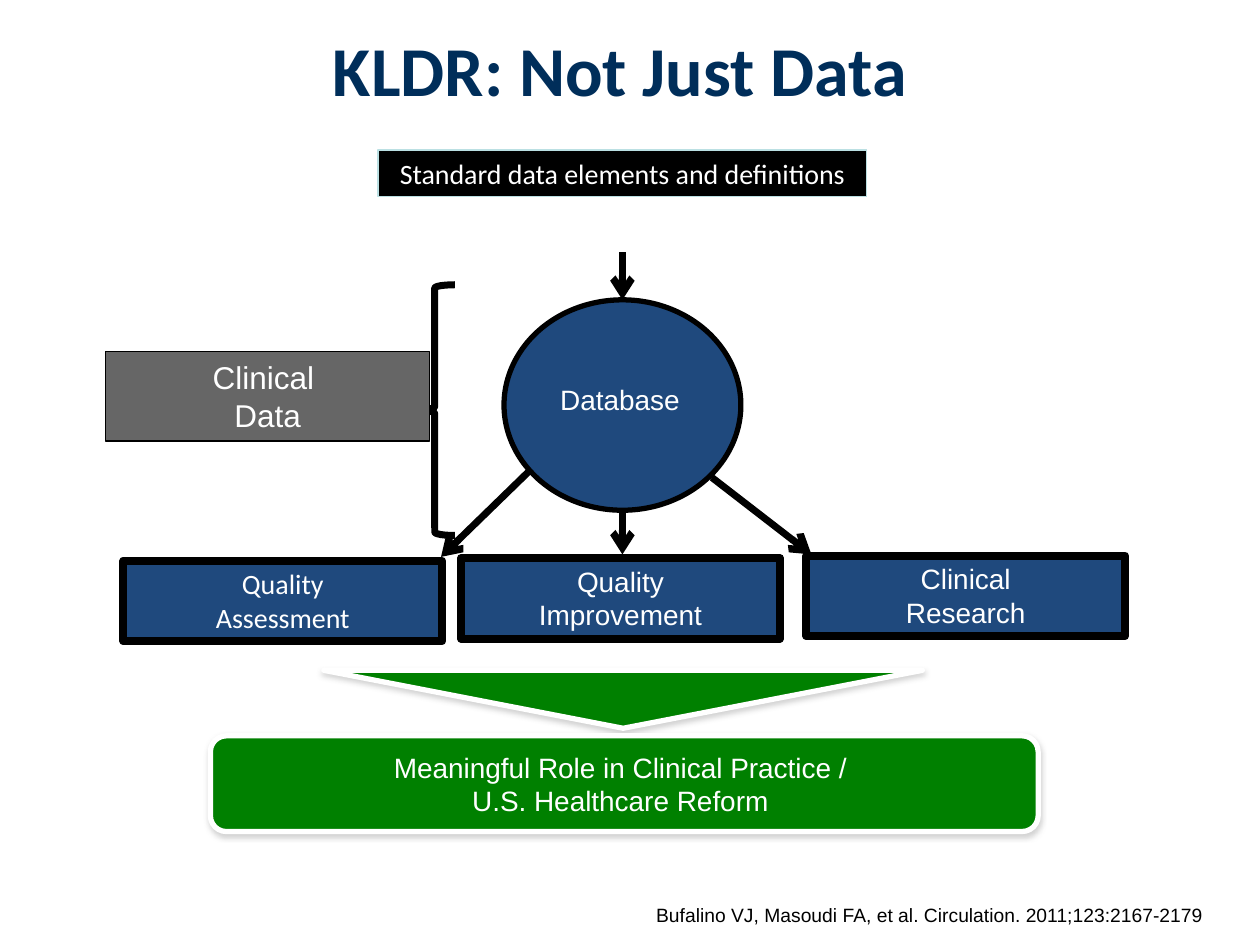
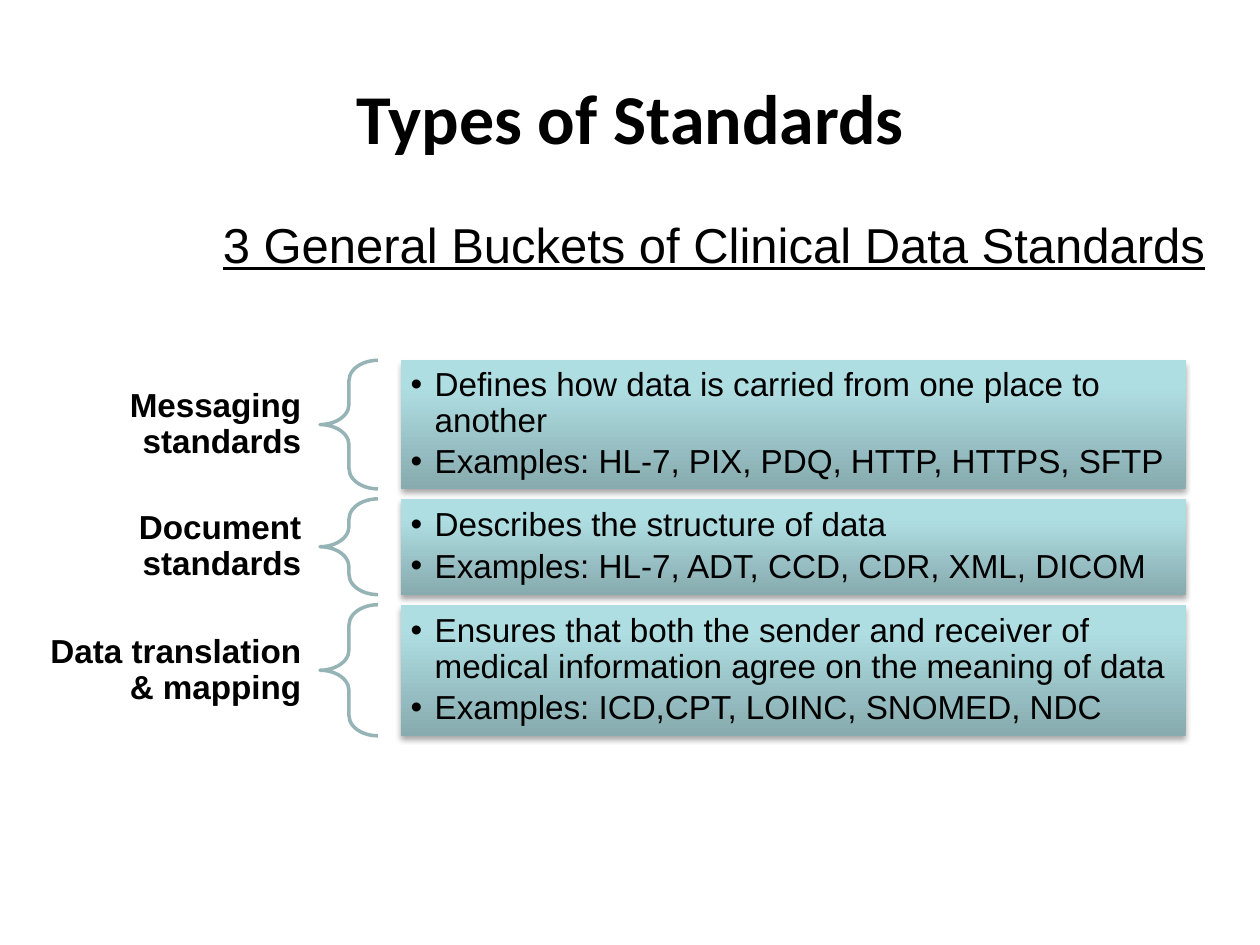
from copy import deepcopy
from dataclasses import dataclass

from lxml import etree
from pptx import Presentation
from pptx.dml.color import RGBColor
from pptx.enum.shapes import MSO_CONNECTOR, MSO_SHAPE
from pptx.enum.text import MSO_ANCHOR, PP_ALIGN
from pptx.oxml.ns import qn
from pptx.util import Inches, Pt

RECT, OVAL, BRACE = MSO_SHAPE.RECTANGLE, MSO_SHAPE.OVAL, MSO_SHAPE.LEFT_BRACE
ROUND, WEDGE = MSO_SHAPE.ROUNDED_RECTANGLE, MSO_SHAPE.ISOSCELES_TRIANGLE
TOP, MID = MSO_ANCHOR.TOP, MSO_ANCHOR.MIDDLE
LEFT, MIDST, RIGHT = PP_ALIGN.LEFT, PP_ALIGN.CENTER, PP_ALIGN.RIGHT
STRAIGHT = MSO_CONNECTOR.STRAIGHT

INK = {
    "black": "000000",
    "white": "FFFFFF",
    "navy": "002E5A",
    "blue": "1F497D",
    "gray": "666666",
    "green": "008000",
    "pale": "BBE0E3",
    "teal": "96B3B6",
    "shade": "808080",
}
BLEND = [(0, "87ABAE"), (0.8, "AFDEE2"), (1, "AFE0E4")]


@dataclass
class Style:
    size: float
    face: str = "Arial"
    ink: str = "white"
    bold: bool = False
    under: bool = False
    align: int = MIDST
    space: float = 1
    after: float = 0


@dataclass
class Box:
    kind: int
    at: tuple
    fill: str = ""
    line: str = ""
    pt: float = 0
    adj: float | None = None
    shade: str = ""
    turn: int = 0


@dataclass
class Row:
    high: float
    tall: float
    label: str
    items: list


HEAD = Style(40, "Calibri", bold=True)
NODE = Style(16)
LABEL = Style(19, ink="black", bold=True, align=RIGHT, space=0.9)
ITEM = Style(19, ink="black", align=LEFT, space=0.9, after=3)

ARROWS = [
    (4.94, 2, 4.94, 2.38),
    (4.23, 3.71, 3.5, 4.42),
    (5.65, 3.79, 6.44, 4.4),
    (4.94, 4.02, 4.94, 4.4),
]
GOALS = [
    (0.98, "Assessment", Style(16, "Calibri")),
    (3.66, "Improvement", NODE),
    (6.4, "Research", NODE),
]
ROWS = [
    Row(1.02, 0.66, "Messaging standards", [
        "Defines how data is carried from one place to another",
        "Examples: HL-7, PIX, PDQ, HTTP, HTTPS, SFTP"]),
    Row(0.76, 0.66, "Document standards", [
        "Describes the structure of data",
        "Examples: HL-7, ADT, CCD, CDR, XML, DICOM"]),
    Row(1.04, 0.93, "Data translation & mapping", [
        "Ensures that both the sender and receiver of medical information "
        "agree on the meaning of data",
        "Examples: ICD,CPT, LOINC, SNOMED, NDC"]),
]
ROW_TOP, ROW_GAP = 2.86, 0.08


def tint(name: str) -> RGBColor:
    return RGBColor.from_string(INK[name])


def put(obj, values: dict) -> None:
    for key, value in values.items():
        setattr(obj, key, value)


def node(parent, tag: str, **attrs: str):
    return etree.SubElement(parent, qn(tag), attrs)


def write(shape, lines: list, style: Style, anchor=TOP,
          pads: tuple = (0.1, 0.05), dots: bool = False,
          wrap: bool = True) -> None:
    frame = shape.text_frame
    side, edge = map(Inches, pads)
    put(frame, {"word_wrap": wrap, "vertical_anchor": anchor,
                "margin_left": side, "margin_right": side,
                "margin_top": edge, "margin_bottom": edge})
    for i, line in enumerate(lines):
        para = frame.add_paragraph() if i else frame.paragraphs[0]
        if dots:
            props = para._p.get_or_add_pPr()
            props.set("marL", str(Inches(0.19)))
            props.set("indent", str(-Inches(0.19)))
            node(props, "a:buFont", typeface="Arial")
            node(props, "a:buChar", char="•")
        put(para, {"alignment": style.align, "line_spacing": style.space,
                   "space_before": Pt(0), "space_after": Pt(style.after)})
        run = para.add_run()
        run.text = line
        put(run.font, {"size": Pt(style.size), "name": style.face,
                       "bold": style.bold, "underline": style.under})
        run.font.color.rgb = tint(style.ink)


def blend(shape) -> None:
    shape.fill.gradient()
    shape.fill.gradient_angle = 90
    stops = shape._element.spPr.find(qn("a:gradFill")).find(qn("a:gsLst"))
    stops.append(deepcopy(stops[0]))
    for stop, (pos, code) in zip(shape.fill.gradient_stops, BLEND):
        stop.position = pos
        stop.color.rgb = RGBColor.from_string(code)


def draw(slide, box: Box):
    shape = slide.shapes.add_shape(box.kind, *map(Inches, box.at))
    shape.rotation = box.turn
    shape.shadow.inherit = False
    if box.adj is not None:
        shape.adjustments[0] = box.adj
    if box.fill == "blend":
        blend(shape)
    elif box.fill:
        shape.fill.solid()
        shape.fill.fore_color.rgb = tint(box.fill)
    else:
        shape.fill.background()
    if box.line:
        shape.line.color.rgb = tint(box.line)
        shape.line.width = Pt(box.pt)
    else:
        shape.line.fill.background()
    if box.shade:
        glow = node(shape._element.spPr.find(qn("a:effectLst")),
                    "a:outerShdw", blurRad=str(Pt(3.1)), dist=str(Pt(1.8)),
                    dir="5400000", rotWithShape="0")
        node(node(glow, "a:srgbClr", val=INK[box.shade]),
             "a:alpha", val="35000")
    return shape


def note(slide, at: tuple, lines: list, style: Style, **more) -> None:
    write(slide.shapes.add_textbox(*map(Inches, at)), lines, style, **more)


def arrow(slide, ends: tuple) -> None:
    link = slide.shapes.add_connector(STRAIGHT, *map(Inches, ends))
    link.line.color.rgb = tint("black")
    link.line.width = Pt(4)
    props = link._element.spPr
    node(props.find(qn("a:ln")), "a:tailEnd", type="arrow")
    node(props, "a:effectLst")


def start(deck, title: str, left: float, top: float, ink: str):
    slide = deck.slides.add_slide(deck.slide_layouts[5])
    head = slide.shapes.title
    put(head, {"left": Inches(left), "top": Inches(top),
               "width": Inches(9), "height": Inches(1.25)})
    HEAD.ink = ink
    write(head, [title], HEAD, MID)
    return slide


def flow(deck) -> None:
    slide = start(deck, "KLDR: Not Just Data", 0.42, -0.08, "navy")
    note(slide, (0.07, 7.12, 9.58, 0.33),
         ["Bufalino VJ, Masoudi FA, et al. Circulation. 2011;123:2167-2179"],
         Style(11, ink="black", align=RIGHT))
    for ends in ARROWS:
        arrow(slide, ends)
    for i, (left, goal, style) in enumerate(GOALS):
        box = Box(RECT, (left, 4.45 - 0.02 * i, 2.53, 0.64),
                  "blue", "black", 4.5)
        first = "Clinical" if goal == "Research" else "Quality"
        write(draw(slide, box), [first, goal], style)
    draw(slide, Box(BRACE, (3.29, 2.26, 0.32, 1.99), "", "black", 4, 0.083))
    data = Box(RECT, (0.84, 2.79, 2.57, 0.71), "gray", "black", 0.75)
    write(draw(slide, data), ["Clinical ", "Data"], Style(18))
    draw(slide, Box(OVAL, (4, 2.38, 1.88, 1.67), "blue", "black", 3))
    note(slide, (4.01, 2.99, 1.82, 0.37), ["Database"], NODE)
    draw(slide, Box(WEDGE, (2.57, 5.32, 4.75, 0.46), "green", "white", 3,
                    0.5, "shade", 180))
    role = Box(ROUND, (1.67, 5.84, 6.57, 0.76), "green", "white", 3,
               0.167, "shade")
    write(draw(slide, role), ["Meaningful Role in Clinical Practice / ",
                              "U.S. Healthcare Reform "], NODE, MID)
    basis = Box(RECT, (3, 1.19, 3.88, 0.37), "black", "pale", 0.75)
    write(draw(slide, basis), ["Standard data elements and definitions"],
          Style(16, "Calibri"))


def kinds(deck) -> None:
    slide = start(deck, "Types of Standards", 0.5, 0.3, "black")
    top = ROW_TOP
    for row in ROWS:
        note(slide, (0.25, top + (row.high - row.tall) / 2, 2.29, row.tall),
             [row.label], LABEL, anchor=MID, pads=(0.15, 0.05))
        draw(slide, Box(BRACE, (2.54, top, 0.46, row.high),
                        "", "teal", 2, 0.35))
        panel = Box(RECT, (3.18, top, 6.23, row.high), "blend", shade="black")
        write(draw(slide, panel), row.items, ITEM, MID, (0.08, 0.08), True)
        top += row.high + ROW_GAP
    note(slide, (1.67, 1.65, 8.09, 0.57),
         ["3 General Buckets of Clinical Data Standards"],
         Style(28, ink="black", under=True, align=LEFT), wrap=False)


def main() -> None:
    deck = Presentation()
    deck.slide_width, deck.slide_height = Inches(10), Inches(7.5)
    flow(deck)
    kinds(deck)
    deck.save("out.pptx")


if __name__ == "__main__":
    main()
